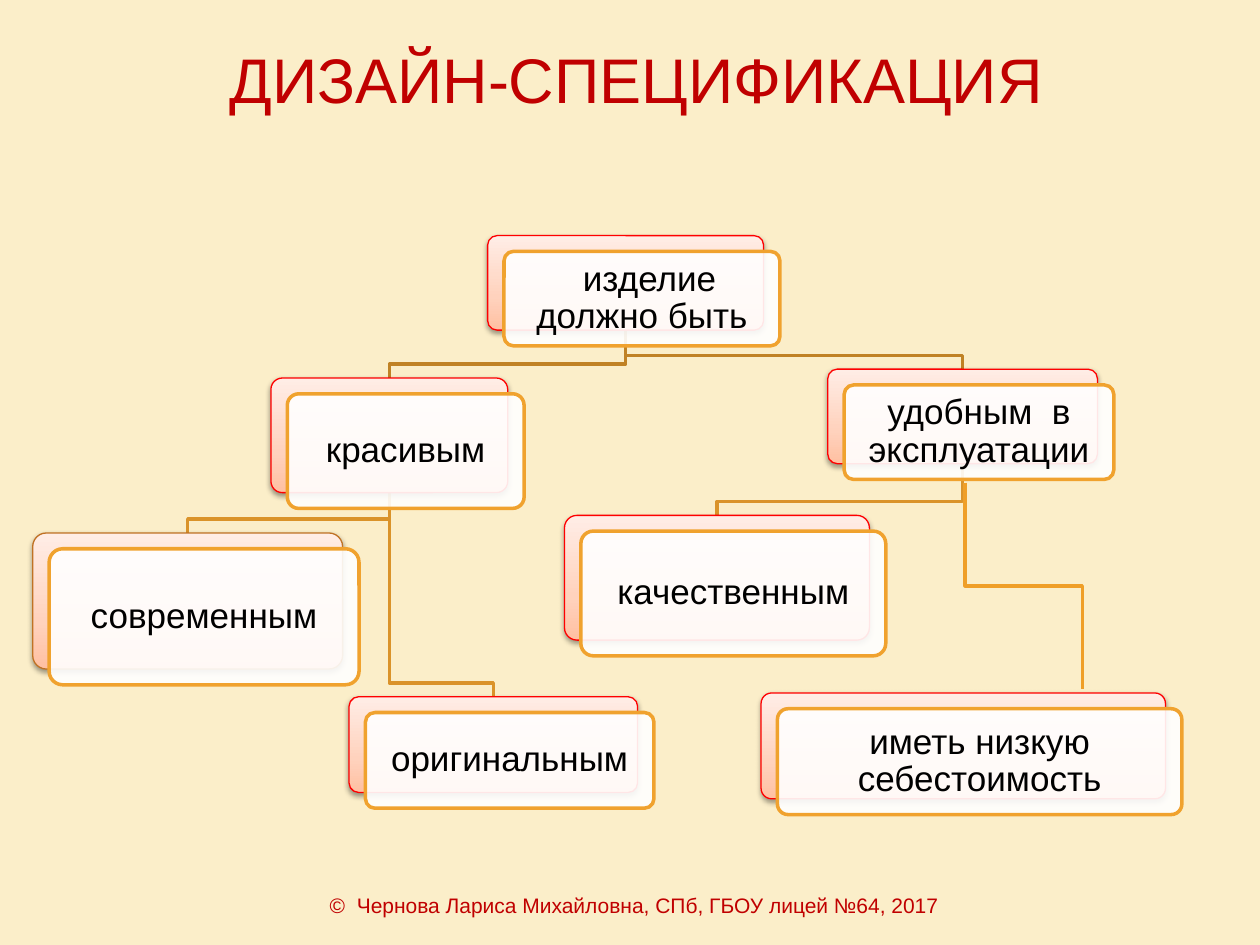
from lxml import etree
from pptx import Presentation
from pptx.dml.color import RGBColor
from pptx.enum.shapes import MSO_CONNECTOR, MSO_SHAPE
from pptx.enum.text import MSO_ANCHOR, PP_ALIGN
from pptx.oxml import parse_xml
from pptx.oxml.ns import qn
from pptx.util import Inches, Pt

ROUND = MSO_SHAPE.ROUNDED_RECTANGLE
ELBOW = MSO_CONNECTOR.ELBOW
MIDDLE = MSO_ANCHOR.MIDDLE
CENTER = PP_ALIGN.CENTER
NS = 'xmlns:a="http://schemas.openxmlformats.org/drawingml/2006/main"'

COLORS = {
    "back": "FBEEC9", "title": "C00000", "text": "000000",
    "card": "FFFFFF", "edge": "F0A22E", "red": "FF0000", "brown": "C07224",
    "upper": "C08225", "lower": "DA932A", "bent": "EF9F28",
}
STOPS = [(0, "FFC0A2"), (35, "FFD2BD"), (100, "FFEDE6")]
SHIFT = (0.13, 0.125)  # front plate against back plate
DROP = 0.11            # last bend of a branch above its child

# name: (left, top, width, height, text, colour of back edge)
CARDS = {
    "root": (3.87, 1.87, 2.19, 0.75, "изделие должно быть", "red"),
    "looks": (2.15, 3, 1.88, 0.91, "красивым", "red"),
    "modern": (0.26, 4.23, 2.46, 1.08, "современным", "brown"),
    "fresh": (2.77, 5.53, 2.29, 0.76, "оригинальным", "red"),
    "handy": (6.57, 2.93, 2.14, 0.75, "удобным  в эксплуатации", "red"),
    "solid": (4.48, 4.09, 2.42, 0.99, "качественным", "red"),
    "cheap": (6.04, 5.5, 3.21, 0.84, "иметь низкую себестоимость", "red"),
}
# parent, child, colour
LINKS = [
    ("handy", "solid", "lower"), ("root", "handy", "upper"),
    ("looks", "fresh", "lower"), ("looks", "modern", "lower"),
    ("root", "looks", "upper"),
]


def rgb(name):
    return RGBColor.from_string(COLORS[name])


def set_line(shape, color, width):
    shape.line.color.rgb = rgb(color)
    shape.line.width = Pt(width)


def set_text(frame, text, size, color, **para):
    for key, value in {"word_wrap": True, "vertical_anchor": MIDDLE}.items():
        setattr(frame, key, value)
    par = frame.paragraphs[0]
    for key, value in {"alignment": CENTER, **para}.items():
        setattr(par, key, value)
    run = par.add_run()
    run.text = text
    for key, value in {"name": "Arial", "size": Pt(size), "bold": False}.items():
        setattr(run.font, key, value)
    run.font.color.rgb = rgb(color)
    return par


def add_plate(slide, left, top, width, height, edge, weight):
    plate = slide.shapes.add_shape(
        ROUND, Inches(left), Inches(top), Inches(width), Inches(height))
    plate.adjustments[0] = 0.1
    plate.shadow.inherit = False
    set_line(plate, edge, weight)
    return plate


def shade(plate):
    """Give a back plate its upward gradient and soft shadow."""
    props = plate.fill._xPr
    stops = "".join(f'<a:gs pos="{pos * 1000}"><a:srgbClr val="{color}"/></a:gs>'
                    for pos, color in STOPS)
    grad = parse_xml(f'<a:gradFill {NS} rotWithShape="1"><a:gsLst>{stops}</a:gsLst>'
                     '<a:lin ang="16200000" scaled="0"/></a:gradFill>')
    props.find(qn("a:prstGeom")).addnext(grad)
    props.find(qn("a:effectLst")).append(parse_xml(
        f'<a:outerShdw {NS} blurRad="{Pt(3.1)}" dist="{Pt(1.6)}" dir="5400000" '
        'rotWithShape="0"><a:srgbClr val="000000"><a:alpha val="38000"/>'
        '</a:srgbClr></a:outerShdw>'))


def add_card(slide, left, top, width, height, text, edge):
    shade(add_plate(slide, left, top, width, height, edge, 0.75))
    front = add_plate(slide, left + SHIFT[0], top + SHIFT[1],
                      width, height, "edge", 2)
    front.fill.solid()
    front.fill.fore_color.rgb = rgb("card")
    color = front.fill._xPr.find(qn("a:solidFill"))[0]
    etree.SubElement(color, qn("a:alpha")).set("val", "90000")
    frame = front.text_frame
    for side in ("left", "right", "top", "bottom"):
        setattr(frame, f"margin_{side}", Inches(0.1))
    return set_text(frame, text, 20, "text", line_spacing=0.9)


def add_branch(slide, parent, child, color):
    left, top, width, height = CARDS[parent][:4]
    start, base = left + width / 2, top + height
    left, top, width = CARDS[child][:3]
    end, bend = left + width / 2, top - DROP
    points = [(start, bend), (end, bend), (end, top)]
    form = slide.shapes.build_freeform(Inches(start), Inches(base))
    form.add_line_segments([(Inches(x), Inches(y)) for x, y in points], close=False)
    branch = form.convert_to_shape()
    branch.fill.background()
    branch.shadow.inherit = False
    set_line(branch, color, 2)


def add_bent(slide, x1, y1, x2, y2, color):
    """Elbow that leaves downwards: a flipped one, turned by 270 degrees."""
    mid_x, mid_y = (x1 + x2) / 2, (y1 + y2) / 2
    across, down = (y2 - y1) / 2, (x2 - x1) / 2
    bent = slide.shapes.add_connector(
        ELBOW, Inches(mid_x + across), Inches(mid_y - down),
        Inches(mid_x - across), Inches(mid_y + down))
    set_line(bent, color, 2)
    props = bent._element.spPr
    props.find(qn("a:xfrm")).set("rot", "16200000")
    etree.SubElement(props, qn("a:effectLst"))


def main():
    deck = Presentation()
    deck.slide_width, deck.slide_height = Inches(10), Inches(7.5)
    slide = deck.slides.add_slide(deck.slide_layouts[5])
    slide.background.fill.solid()
    slide.background.fill.fore_color.rgb = rgb("back")

    # Title
    title = slide.shapes.title
    place = {"left": 0.55, "top": 0, "width": 9, "height": 1.25}
    for key, value in place.items():
        setattr(title, key, Inches(value))
    set_text(title.text_frame, "ДИЗАЙН-СПЕЦИФИКАЦИЯ", 36, "title")

    # Tree: branches lie behind the cards
    for link in LINKS:
        add_branch(slide, *link)
    pars = {name: add_card(slide, *card) for name, card in CARDS.items()}
    pars["root"]._p.get_or_add_pPr().set("indent", str(Inches(0.12)))
    add_bent(slide, 7.66, 3.83, 8.59, 5.47, "bent")

    # Footer
    foot = slide.shapes.add_textbox(
        Inches(1.48), Inches(7.03), Inches(7.11), Inches(0.3))
    set_text(foot.text_frame,
             "©  Чернова Лариса Михайловна, СПб, ГБОУ лицей №64, 2017", 12, "title")

    deck.save("out.pptx")


if __name__ == "__main__":
    main()
